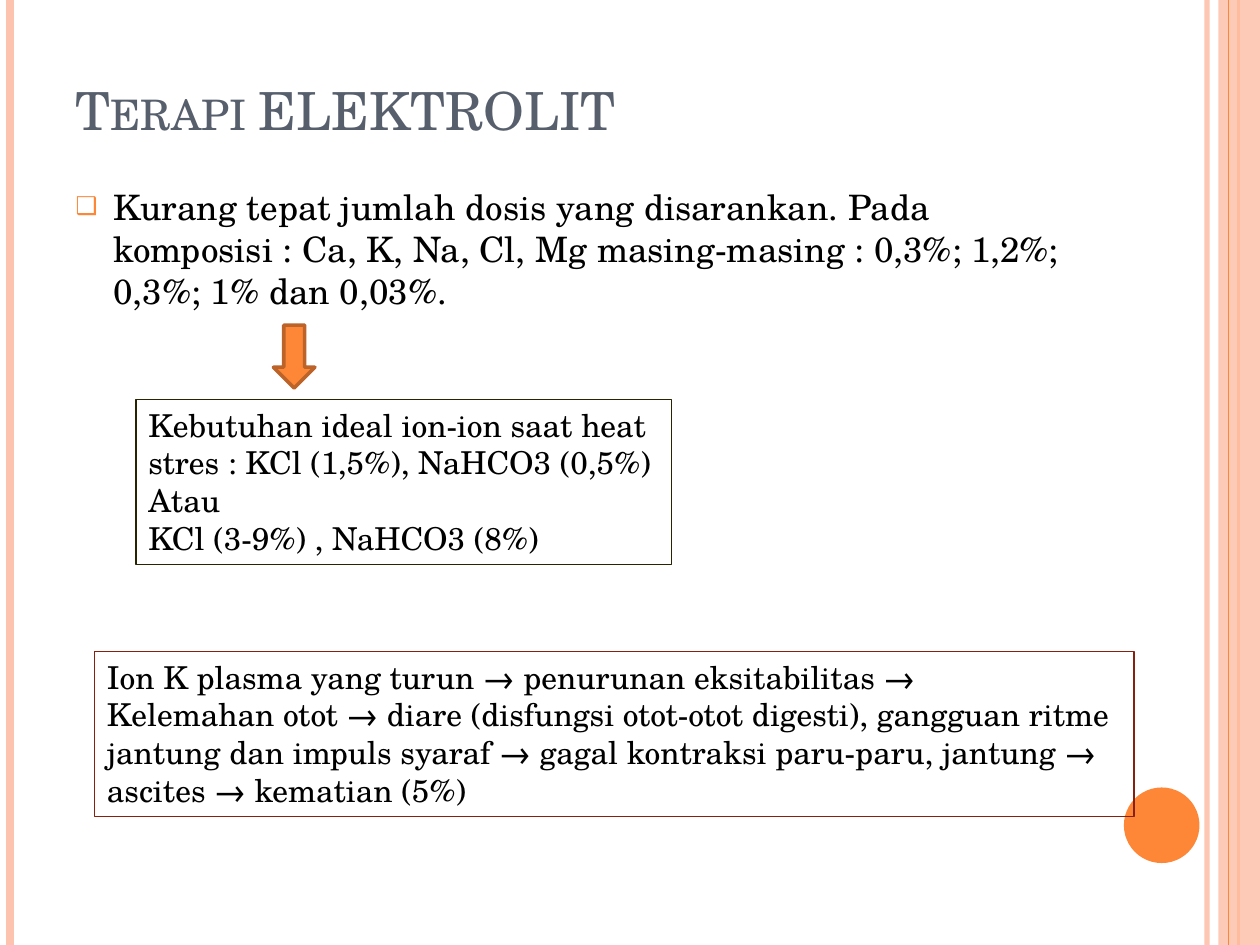
from dataclasses import dataclass

from lxml import etree
from pptx import Presentation
from pptx.dml import color
from pptx.enum import shapes, text
from pptx.oxml import ns
from pptx.util import Inches, Pt


@dataclass(frozen=True)
class Theme:
    font: str = "TeX Gyre Schola"
    ink: str = "000000"
    heading: str = "575F6D"
    accent: str = "FE8637"
    accent_dark: str = "BC6329"
    pale: str = "FEC3AE"
    needs_border: str = "292400"
    effects_border: str = "862110"
    title_size: int = 30
    body_size: int = 20
    note_size: int = 18


THEME = Theme()


def rgb(value):
    return color.RGBColor.from_string(value)


def place(part, box):
    part.left, part.top, part.width, part.height = (Inches(v) for v in box)


def add_run(paragraph, words, size, ink=THEME.ink):
    run = paragraph.add_run()
    run.text = words
    run.font.name = THEME.font
    run.font.size = Pt(size)
    run.font.color.rgb = rgb(ink)
    return run


def set_alpha(properties, percent):
    tint = properties.find(".//" + ns.qn("a:srgbClr"))
    etree.SubElement(tint, ns.qn("a:alpha"), val=str(percent * 1000))


def add_figure(slide, kind, box, fill=None, border=None, weight=0.75):
    figure = slide.shapes.add_shape(kind, *(Inches(v) for v in box))
    figure.shadow.inherit = False
    if fill:
        figure.fill.solid()
        figure.fill.fore_color.rgb = rgb(fill)
    else:
        figure.fill.background()
    if border:
        figure.line.color.rgb = rgb(border)
        figure.line.width = Pt(weight)
    else:
        figure.line.fill.background()
    return figure


def add_rule(slide, x, height, ink, weight, alpha=None):
    rule = slide.shapes.add_connector(
        shapes.MSO_CONNECTOR.STRAIGHT, Inches(x), 0, Inches(x), Inches(height))
    rule.line.color.rgb = rgb(ink)
    rule.line.width = Pt(weight)
    properties = rule._element.spPr
    if alpha:
        set_alpha(properties, alpha)
    etree.SubElement(properties, ns.qn("a:effectLst"))


def draw_frame(slide, box):
    left, top, width, height = box
    right = left + width
    add_rule(slide, right - 0.42, height, THEME.pale, 3, alpha=93)
    add_rule(slide, left + 0.08, height, THEME.pale, 4.5)
    add_rule(slide, right - 0.17, height, THEME.accent, 1.5)
    band = add_figure(slide, shapes.MSO_SHAPE.RECTANGLE,
                      (right - 0.33, top, 0.33, height), THEME.pale)
    set_alpha(band._element.spPr, 87)
    add_rule(slide, right - 0.25, height, THEME.accent, 0.75)
    add_figure(slide, shapes.MSO_SHAPE.OVAL,
               (right - 1.08, top + 6.25, 0.6, 0.6), THEME.accent)


def fill_title(slide, box, words):
    title = slide.shapes.title
    place(title, box)
    frame = title.text_frame
    frame.vertical_anchor = text.MSO_ANCHOR.BOTTOM
    frame.auto_size = text.MSO_AUTO_SIZE.NONE
    heading = frame.paragraphs[0]
    heading.alignment = text.PP_ALIGN.LEFT
    run = add_run(heading, words, THEME.title_size, THEME.heading)
    run.font._element.set("cap", "small")


def fill_body(slide, box, words):
    body = slide.placeholders[1]
    place(body, box)
    body.text_frame.auto_size = text.MSO_AUTO_SIZE.NONE
    dosage = body.text_frame.paragraphs[0]
    dosage.space_before = Pt(6)
    add_run(dosage, words, THEME.body_size)
    properties = dosage._p.get_or_add_pPr()
    properties.set("marL", str(Inches(0.3)))
    properties.set("indent", str(-Inches(0.3)))
    bullet_ink = etree.SubElement(properties, ns.qn("a:buClr"))
    etree.SubElement(bullet_ink, ns.qn("a:srgbClr"), val=THEME.accent)
    etree.SubElement(properties, ns.qn("a:buSzPct"), val="70000")
    etree.SubElement(properties, ns.qn("a:buChar"), char="❑")


def draw_note(slide, box, border, lines):
    note = add_figure(slide, shapes.MSO_SHAPE.RECTANGLE, box, border=border)
    frame = note.text_frame
    frame.word_wrap = True
    frame.auto_size = text.MSO_AUTO_SIZE.SHAPE_TO_FIT_TEXT
    frame.vertical_anchor = text.MSO_ANCHOR.TOP
    for index, words in enumerate(lines):
        paragraph = frame.add_paragraph() if index else frame.paragraphs[0]
        paragraph.alignment = text.PP_ALIGN.LEFT
        add_run(paragraph, words, THEME.note_size)


def main():
    deck = Presentation()
    deck.slide_width, deck.slide_height = Inches(10), Inches(7.5)
    slide = deck.slides.add_slide(deck.slide_layouts[1])
    draw_frame(slide, (0, 0, 10, 7.5))
    fill_title(slide, (0.5, 0.3, 8.17, 0.87), "Terapi ELEKTROLIT")
    fill_body(slide, (0.5, 1.42, 8.17, 5.33),
              "Kurang tepat jumlah dosis yang disarankan. Pada komposisi : "
              "Ca, K, Na, Cl, Mg masing-masing : 0,3%; 1,2%; 0,3%; 1% dan 0,03%.")
    add_figure(slide, shapes.MSO_SHAPE.DOWN_ARROW, (2.17, 2.58, 0.33, 0.5),
               THEME.accent, THEME.accent_dark, 2)
    draw_note(slide, (1.08, 3.17, 4.25, 1.31), THEME.needs_border, [
        "Kebutuhan ideal ion-ion saat heat stres : KCl (1,5%), NaHCO3 (0,5%)",
        "Atau",
        "KCl (3-9%) , NaHCO3 (8%)",
    ])
    draw_note(slide, (0.75, 5.17, 8.25, 1.31), THEME.effects_border, [
        "Ion K plasma yang turun → penurunan eksitabilitas →",
        "Kelemahan otot → diare (disfungsi otot-otot digesti), gangguan ritme "
        "jantung dan impuls syaraf → gagal kontraksi paru-paru, jantung → "
        "ascites → kematian (5%)",
    ])
    deck.save("out.pptx")


if __name__ == "__main__":
    main()
